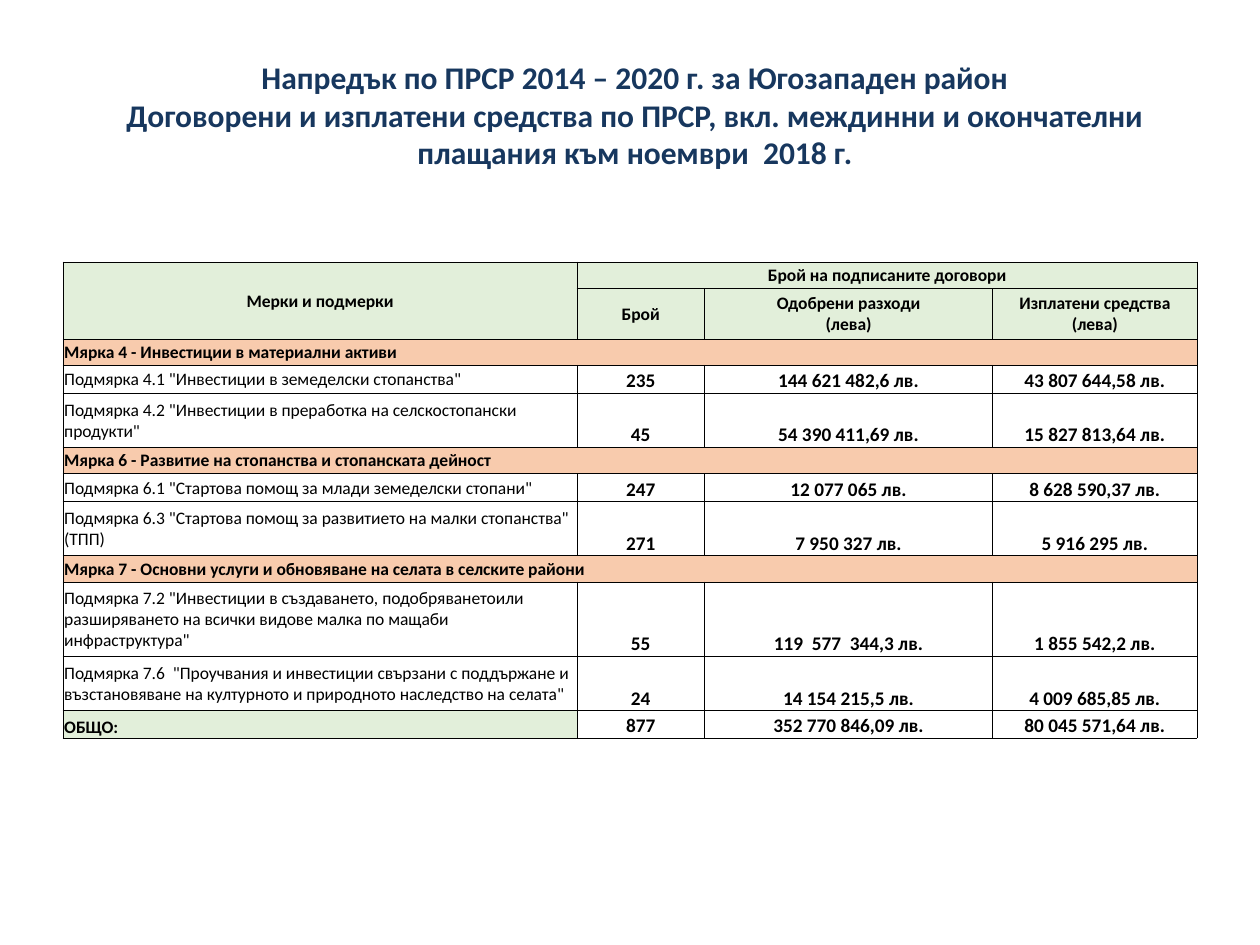
from dataclasses import dataclass
from typing import Optional

from lxml import etree
from pptx import Presentation
from pptx.dml.color import RGBColor
from pptx.enum.text import MSO_ANCHOR, PP_ALIGN
from pptx.oxml.ns import qn
from pptx.table import Table, _Cell
from pptx.text.text import _Paragraph
from pptx.util import Inches, Pt

LEFT, CENTER = PP_ALIGN.LEFT, PP_ALIGN.CENTER
MIDDLE, BOTTOM = MSO_ANCHOR.MIDDLE, MSO_ANCHOR.BOTTOM

NAVY = RGBColor(0x17, 0x37, 0x5E)
BLACK = RGBColor(0, 0, 0)
GREEN = RGBColor(0xE2, 0xEF, 0xDA)
ORANGE = RGBColor(0xF8, 0xCB, 0xAD)

FONT = "Calibri"
TITLE = (
    "Напредък по ПРСР 2014 – 2020 г. за Югозападен район\n"
    "Договорени и изплатени средства по ПРСР, вкл. междинни и окончателни "
    "плащания към ноември  2018 г."
)
COLUMN_WIDTHS = (4.08, 1.01, 2.29, 1.62)
HEADER_HEIGHTS = (0.21, 0.4)
SUBHEADERS = ("Брой", "Одобрени разходи\n(лева)", "Изплатени средства\n(лева)")


@dataclass(frozen=True)
class Style:
    size: int = 10
    bold: bool = True
    align: PP_ALIGN = LEFT
    anchor: MSO_ANCHOR = MIDDLE
    fill: Optional[RGBColor] = None


HEADER = Style(align=CENTER, fill=GREEN)
MEASURE = Style(fill=ORANGE)
SUBMEASURE = Style(bold=False)
AMOUNT = Style(size=11, align=CENTER, anchor=BOTTOM)
TOTAL = Style(anchor=BOTTOM, fill=GREEN)


@dataclass(frozen=True)
class Row:
    height: float
    label: str
    style: Style
    amounts: tuple[str, ...] = ()


ROWS = (
    Row(0.21, "Мярка 4 - Инвестиции в материални активи", MEASURE),
    Row(0.22, 'Подмярка 4.1 "Инвестиции в земеделски стопанства"', SUBMEASURE,
        ("235", "144 621 482,6 лв.", "43 807 644,58 лв.")),
    Row(0.43, 'Подмярка 4.2 "Инвестиции в преработка на селскостопански продукти"',
        SUBMEASURE, ("45", "54 390 411,69 лв.", "15 827 813,64 лв.")),
    Row(0.21, "Мярка 6 - Развитие на стопанства и стопанската дейност", MEASURE),
    Row(0.22, 'Подмярка 6.1 "Стартова помощ за млади земеделски стопани"', SUBMEASURE,
        ("247", "12 077 065 лв.", "8 628 590,37 лв.")),
    Row(0.43, 'Подмярка 6.3 "Стартова помощ за развитието на малки стопанства" (ТПП)',
        SUBMEASURE, ("271", "7 950 327 лв.", "5 916 295 лв.")),
    Row(0.21, "Мярка 7 - Основни услуги и обновяване на селата в селските райони", MEASURE),
    Row(0.59, 'Подмярка 7.2 "Инвестиции в създаването, подобряванетоили разширяването '
        'на всички видове малка по мащаби инфраструктура"', SUBMEASURE,
        ("55", "119  577  344,3 лв.", "1 855 542,2 лв.")),
    Row(0.43, 'Подмярка 7.6  "Проучвания и инвестиции свързани с поддържане и '
        'възстановяване на културното и природното наследство на селата"', SUBMEASURE,
        ("24", "14 154 215,5 лв.", "4 009 685,85 лв.")),
    Row(0.22, "ОБЩО:", TOTAL, ("877", "352 770 846,09 лв.", "80 045 571,64 лв.")),
)


def write(p: _Paragraph, text: str, size: int, bold: bool, color: RGBColor,
          align: PP_ALIGN) -> None:
    p.text = text
    p.alignment = align
    p.font.name = FONT
    p.font.size = Pt(size)
    p.font.bold = bold
    p.font.color.rgb = color


def add_borders(cell: _Cell) -> None:
    tc_pr = cell._tc.get_or_add_tcPr()
    for side in ("L", "R", "T", "B"):
        ln = etree.SubElement(tc_pr, qn(f"a:ln{side}"), w=str(Pt(0.5)))
        fill = etree.SubElement(ln, qn("a:solidFill"))
        etree.SubElement(fill, qn("a:srgbClr"), val=str(BLACK))


def fill_cell(cell: _Cell, text: str, style: Style) -> None:
    cell.vertical_anchor = style.anchor
    write(cell.text_frame.paragraphs[0], text, style.size, style.bold, BLACK, style.align)
    if style.fill is not None:
        cell.fill.solid()
        cell.fill.fore_color.rgb = style.fill


def prepare_table(table: Table, heights: list[float]) -> None:
    table.first_row = False
    table.horz_banding = False
    for column, width in zip(table.columns, COLUMN_WIDTHS):
        column.width = Inches(width)
    for row, height in zip(table.rows, heights):
        row.height = Inches(height)
    for cell in table.iter_cells():
        cell.margin_left = cell.margin_right = cell.margin_top = Inches(0.01)
        cell.margin_bottom = 0
        add_borders(cell)
        cell.fill.background()


def add_title(s) -> None:
    tf = s.shapes.add_textbox(Inches(0.54), Inches(0.41), Inches(9), Inches(1.01)).text_frame
    tf.word_wrap = True
    write(tf.paragraphs[0], TITLE, 18, True, NAVY, CENTER)


def add_measures_table(s) -> None:
    heights = [*HEADER_HEIGHTS, *(row.height for row in ROWS)]
    table = s.shapes.add_table(
        len(heights), len(COLUMN_WIDTHS), Inches(0.5), Inches(2.08),
        Inches(sum(COLUMN_WIDTHS)), Inches(sum(heights)),
    ).table
    prepare_table(table, heights)
    last = len(COLUMN_WIDTHS) - 1

    table.cell(0, 0).merge(table.cell(1, 0))
    table.cell(0, 1).merge(table.cell(0, last))
    fill_cell(table.cell(0, 0), "Мерки и подмерки", HEADER)
    fill_cell(table.cell(0, 1), "Брой на подписаните договори", HEADER)
    for c, text in enumerate(SUBHEADERS, 1):
        fill_cell(table.cell(1, c), text, HEADER)

    for r, row in enumerate(ROWS, len(HEADER_HEIGHTS)):
        if not row.amounts:
            table.cell(r, 0).merge(table.cell(r, last))
        fill_cell(table.cell(r, 0), row.label, row.style)
        for c, amount in enumerate(row.amounts, 1):
            fill_cell(table.cell(r, c), amount, AMOUNT)


def main() -> None:
    prs = Presentation()
    prs.slide_width, prs.slide_height = Inches(10), Inches(7.5)
    s = prs.slides.add_slide(prs.slide_layouts[6])
    add_title(s)
    add_measures_table(s)
    prs.save("out.pptx")


if __name__ == "__main__":
    main()
